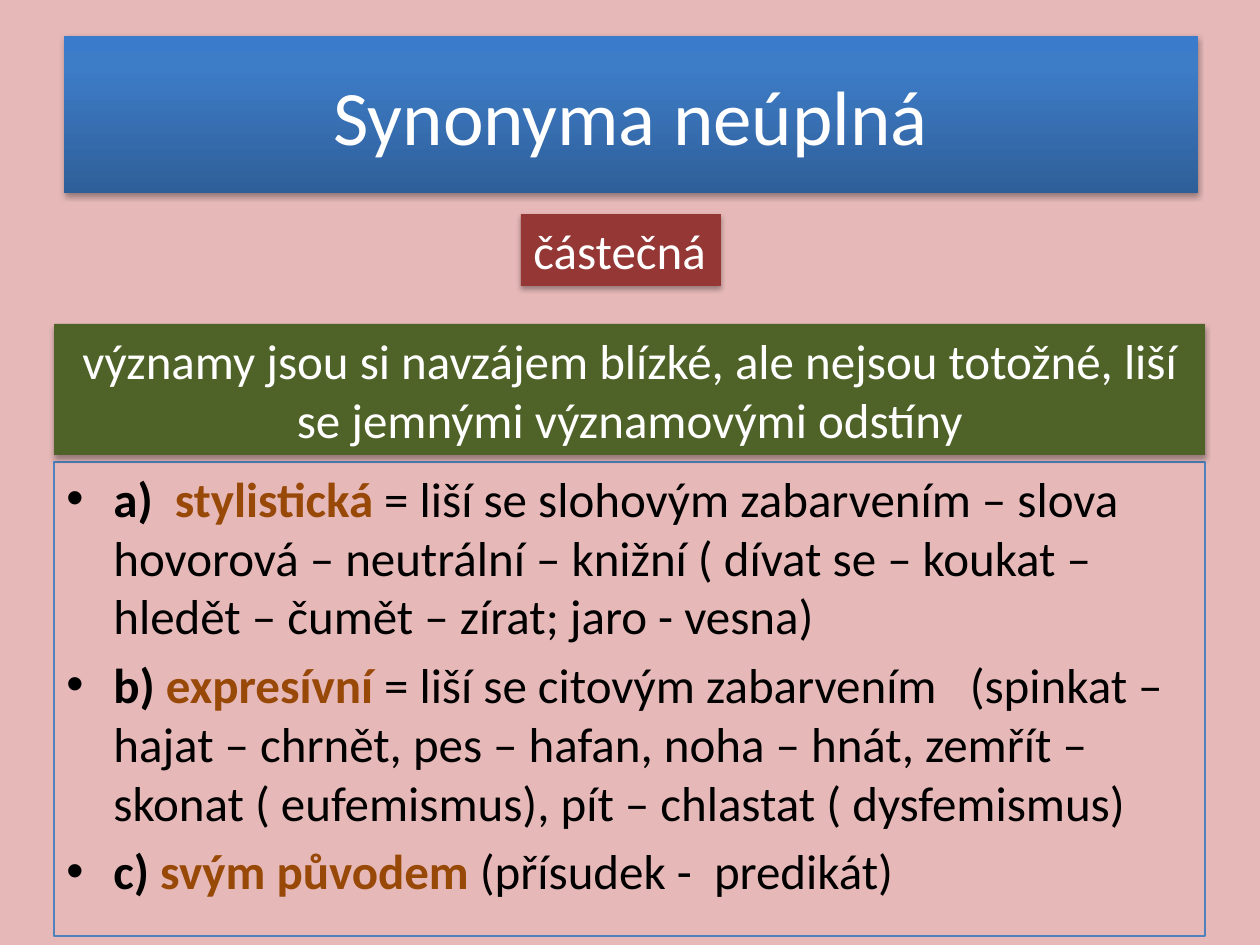
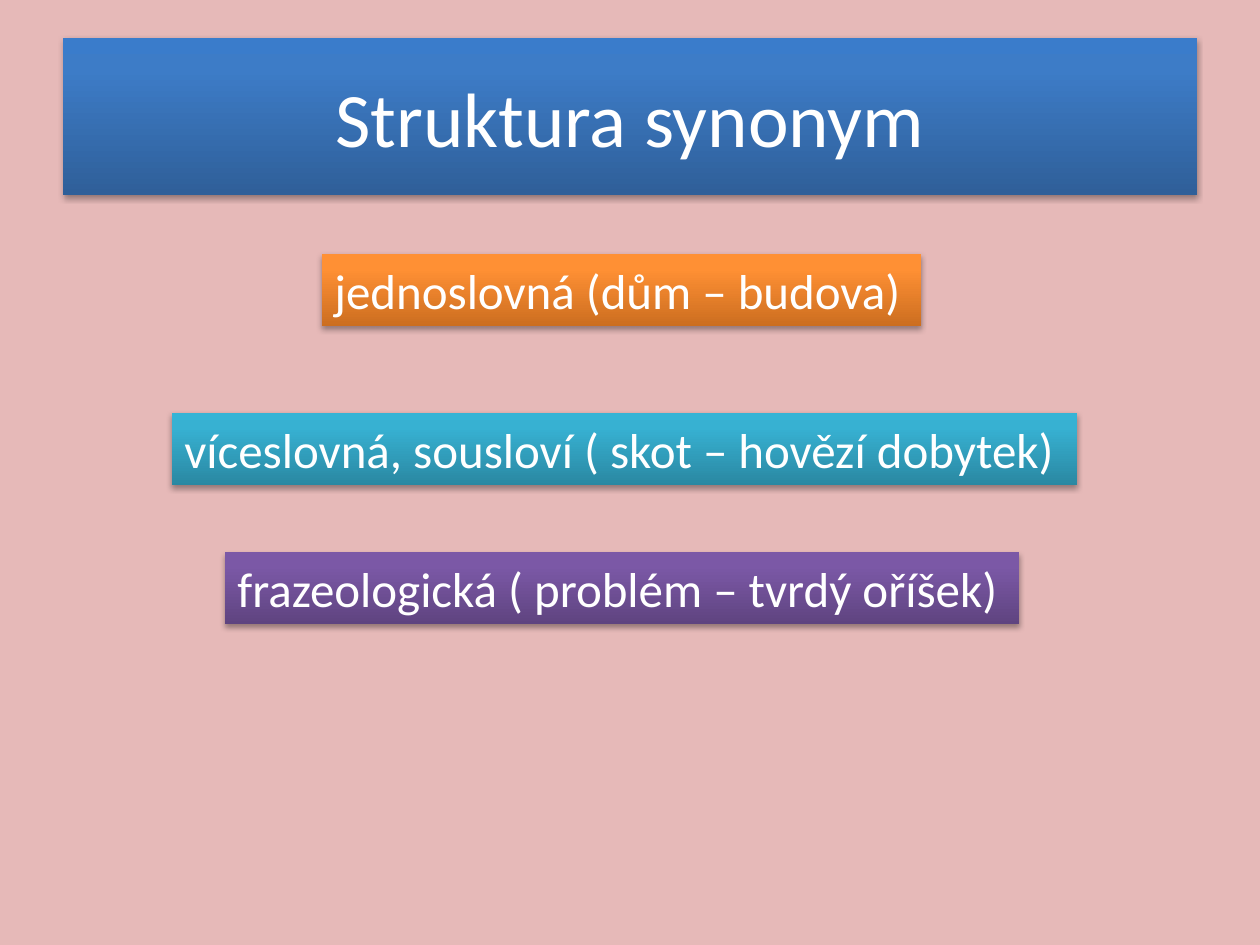
from copy import deepcopy
from dataclasses import dataclass

from lxml import etree
from pptx import Presentation
from pptx import util as u
from pptx.dml.color import RGBColor
from pptx.enum import text
from pptx.oxml import parse_xml
from pptx.oxml.ns import nsdecls, qn

EMU_PER_PX = 914400 / 126


@dataclass(frozen=True)
class Theme:
    """Colours, fonts and type sizes that the slides share."""
    font: str = "Calibri"
    title_size: int = 44
    body_size: int = 28
    paper: str = "E6B9B8"
    white: str = "FFFFFF"
    ink: str = "000000"
    term: str = "984807"
    frame: str = "4F81BD"
    red: str = "953735"
    green: str = "4F6228"
    blue: tuple = ("2F5F99", "3D7CC7", "3A7CCB")
    orange: tuple = ("CC6E20", "FF9034", "FF9136")
    aqua: tuple = ("2A88A2", "37B1D2", "34B4D6")
    purple: tuple = ("5F4480", "7B58A6", "7C57A8")


T = Theme()
STOPS = (0, 0.8, 1)
KINDS = (
    ("a)  ", "stylistická", " = liší se slohovým zabarvením – slova hovorová – neutrální – "
     "knižní ( dívat se – koukat – hledět – čumět – zírat; jaro - vesna)"),
    ("b) ", "expresívní ", "= liší se citovým zabarvením   (spinkat – hajat – chrnět, "
     "pes – hafan, noha – hnát, zemřít – skonat ( eufemismus), pít – chlastat ( dysfemismus)"),
    ("c) ", "svým původem ", "(přísudek -  predikát)"),
)
STRUCTURES = (
    ("jednoslovná (dům – budova)", (322, 254, 599, 72), T.orange),
    ("víceslovná, sousloví ( skot – hovězí dobytek)", (172, 413, 905, 72), T.aqua),
    ("frazeologická ( problém – tvrdý oříšek)", (225, 552, 794, 72), T.purple),
)


def px(n):
    """Turn pixels into EMU."""
    return u.Emu(round(n * EMU_PER_PX))


def assign(obj, **values):
    """Set each given attribute on an object."""
    for name, value in values.items():
        setattr(obj, name, value)


def add_run(p, words, color, size=T.body_size, bold=False):
    """Append a formatted run to a paragraph."""
    r = p.add_run()
    r.text = words
    assign(r.font, name=T.font, size=u.Pt(size), bold=bold)
    r.font.color.rgb = RGBColor.from_string(color)


def paint(sp, fill):
    """Fill a shape with one colour or a three-stop vertical gradient."""
    if isinstance(fill, str):
        sp.fill.solid()
        sp.fill.fore_color.rgb = RGBColor.from_string(fill)
        return
    sp.fill.gradient()
    sp.fill.gradient_angle = 90
    stops = sp.element.spPr.find(".//" + qn("a:gsLst"))
    stops.append(deepcopy(stops[-1]))
    for stop, position, color in zip(sp.fill.gradient_stops, STOPS, fill):
        stop.position = position
        stop.color.rgb = RGBColor.from_string(color)


def cast_shadow(sp):
    """Give a shape the soft shadow below it."""
    sp.shadow.inherit = False
    sp.element.spPr.find(qn("a:effectLst")).append(parse_xml(
        f'<a:outerShdw {nsdecls("a")} blurRad="40000" dist="23000" dir="5400000" '
        'rotWithShape="0"><a:srgbClr val="000000"><a:alpha val="35000"/>'
        '</a:srgbClr></a:outerShdw>'))


def add_panel(s, box, words, fill, size=T.body_size, align=text.PP_ALIGN.CENTER, **frame):
    """Place a filled, shadowed panel with one paragraph in the box."""
    sp = s.shapes.add_textbox(*map(px, box))
    paint(sp, fill)
    cast_shadow(sp)
    tf = sp.text_frame
    assign(tf, **{"word_wrap": True, **frame})
    p = tf.paragraphs[0]
    p.alignment = align
    add_run(p, words, T.white, size)


def add_title(s, box, words):
    """Place the blue title band."""
    add_panel(s, box, words, T.blue, T.title_size,
              vertical_anchor=text.MSO_ANCHOR.MIDDLE)


def add_badge(s, box, words, fill):
    """Place a one-line label that fits its text."""
    add_panel(s, box, words, fill, align=text.PP_ALIGN.LEFT, word_wrap=False,
              auto_size=text.MSO_AUTO_SIZE.SHAPE_TO_FIT_TEXT)


def add_kinds(s, box, kinds):
    """Place the framed bullet list of synonym kinds."""
    sp = s.shapes.add_textbox(*map(px, box))
    sp.line.color.rgb = RGBColor.from_string(T.frame)
    sp.line.width = u.Pt(0.75)
    tf = sp.text_frame
    tf.word_wrap = True
    for i, (mark, term, meaning) in enumerate(kinds):
        p = tf.add_paragraph() if i else tf.paragraphs[0]
        p.space_before = u.Pt(T.body_size * 0.2)
        pPr = p._p.get_or_add_pPr()
        pPr.set("marL", str(px(47)))
        pPr.set("indent", str(-px(47)))
        etree.SubElement(pPr, qn("a:buFont")).set("typeface", "Arial")
        etree.SubElement(pPr, qn("a:buChar")).set("char", "•")
        add_run(p, mark, T.ink, bold=True)
        add_run(p, term, T.term, bold=True)
        add_run(p, meaning, T.ink)


def new_slide(prs):
    """Add a blank slide on the shared background."""
    s = prs.slides.add_slide(prs.slide_layouts[6])
    s.background.fill.solid()
    s.background.fill.fore_color.rgb = RGBColor.from_string(T.paper)
    return s


def build_partial_synonyms(prs):
    """Build the slide on partial synonyms."""
    s = new_slide(prs)
    add_title(s, (64, 36, 1134, 157), "Synonyma neúplná")
    add_kinds(s, (54, 462, 1151, 474), KINDS)
    add_badge(s, (521, 214, 200, 72), "částečná", T.red)
    add_panel(s, (54, 324, 1151, 131),
              "významy jsou si navzájem blízké, ale nejsou totožné, "
              "liší se jemnými významovými odstíny", T.green,
              auto_size=text.MSO_AUTO_SIZE.SHAPE_TO_FIT_TEXT)


def build_structure(prs):
    """Build the slide on the structure of synonyms."""
    s = new_slide(prs)
    add_title(s, (63, 38, 1134, 157), "Struktura synonym")
    for words, box, fill in STRUCTURES:
        add_badge(s, box, words, fill)


def main():
    """Build and save the presentation."""
    prs = Presentation()
    assign(prs, slide_width=px(1260), slide_height=px(945))
    build_partial_synonyms(prs)
    build_structure(prs)
    prs.save("out.pptx")


if __name__ == "__main__":
    main()
